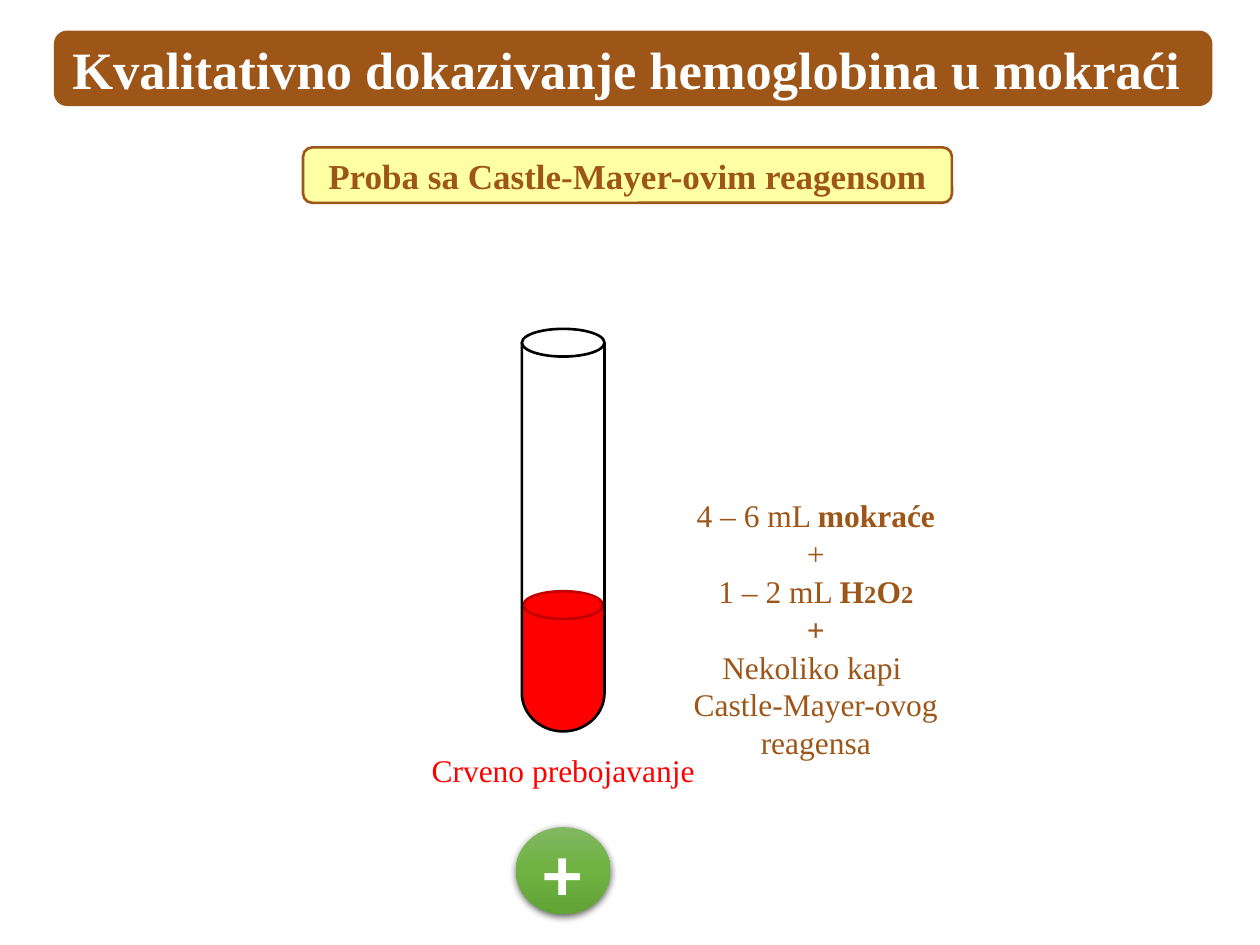
from copy import deepcopy
from math import cos, pi, sin

from lxml import etree
from pptx import Presentation
from pptx.dml.color import RGBColor
from pptx.enum.shapes import MSO_SHAPE
from pptx.enum.text import MSO_ANCHOR, PP_ALIGN
from pptx.util import Inches, Pt

ROUNDED, OVAL = MSO_SHAPE.ROUNDED_RECTANGLE, MSO_SHAPE.OVAL
MIDDLE, CENTER = MSO_ANCHOR.MIDDLE, PP_ALIGN.CENTER
SERIF = "Times New Roman"
BROWN, RED, BLACK, WHITE = "9D5618", "FF0000", "000000", "FFFFFF"
DRAWING = "http://schemas.openxmlformats.org/drawingml/2006/main"

deck = Presentation()
deck.slide_width, deck.slide_height = Inches(10), Inches(7.5)
page = deck.slides.add_slide(deck.slide_layouts[6])
CELL = deck.slide_width // 100  # grid of 100 columns and 75 rows


def color(value):
    return RGBColor.from_string(value)


def paint(shape, fill, line, width):
    """Set fill and outline, where None means neither is drawn."""
    shape.shadow.inherit = False
    if fill:
        shape.fill.solid()
        shape.fill.fore_color.rgb = color(fill)
    else:
        shape.fill.background()
    if line:
        shape.line.color.rgb = color(line)
        shape.line.width = Pt(width)
    else:
        shape.line.fill.background()


# Headings: column, row, columns, rows, fill, line width, text, size, text colour
headings = [
    (4.35, 2.5, 91.8, 5.85, BROWN, 1, "Kvalitativno dokazivanje hemoglobina u mokraći ", 30, WHITE),
    (24.05, 11.7, 51.5, 4.4, "FFFFA3", 1.5, "Proba sa Castle-Mayer-ovim reagensom", 20, BROWN),
]
for column, row, columns, rows, fill, width, text, size, ink in headings:
    heading = page.shapes.add_shape(
        ROUNDED, *(int(n * CELL) for n in (column, row, columns, rows)))
    paint(heading, fill, BROWN, width)
    heading.text_frame.word_wrap = True
    heading.text_frame.vertical_anchor = MIDDLE
    para = heading.text_frame.paragraphs[0]
    para.text, para.alignment = text, CENTER
    para.font.name, para.font.size, para.font.bold = SERIF, Pt(size), True
    para.font.color.rgb = color(ink)

# Test tube: the liquid and the glass share one rounded bottom.
# Outline points are whole EMU, because the builder rounds its coordinates.
tube_center, tube_radius = 44.7, 3.28
bottom_row, bottom_depth, rim_rows = 55, 3.05, 2.2
left_wall = int((tube_center - tube_radius) * CELL)
right_wall = int((tube_center + tube_radius) * CELL)
bottom = [(int((tube_center + tube_radius * cos(pi * step / 40)) * CELL),
           int((bottom_row + bottom_depth * sin(pi * step / 40)) * CELL))
          for step in range(41)]
parts = [  # top row, body fill, body line, rim fill, rim line, rim columns
    (48.02, RED, None, RED, "C00000", 6.3),
    (27.2, None, BLACK, WHITE, BLACK, 6.56),
]
for top, fill, line, rim_fill, rim_line, rim_columns in parts:
    top_edge = int(top * CELL)
    builder = page.shapes.build_freeform(left_wall, top_edge)
    builder.add_line_segments([(right_wall, top_edge)] + bottom, close=True)
    paint(builder.convert_to_shape(), fill, line, 1.5)
    rim = page.shapes.add_shape(
        OVAL, int((tube_center - rim_columns / 2) * CELL),
        int((top - rim_rows / 2) * CELL),
        int(rim_columns * CELL), int(rim_rows * CELL))
    paint(rim, rim_fill, rim_line, 1.5)

# Captions: each line is a list of (text, size, bold)
recipe = [
    [("4 – 6 mL ", 18, False), ("mokraće", 18, True)],
    [("+", 18, False)],
    [("1 – 2 mL ", 18, False), ("H", 18, True), ("2", 14, True),
     ("O", 18, True), ("2", 14, True)],
    [("+", 18, True)],
    [("Nekoliko kapi ", 18, False)],
    [("Castle-Mayer-ovog reagensa", 18, False)],
]
result = [[("Crveno prebojavanje", 18, False)]]
captions = [
    (49.8, 38.9, 29.9, 22.2, BROWN, recipe),
    (31.4, 59.1, 26.6, 4, RED, result),
]
for column, row, columns, rows, ink, lines in captions:
    box = page.shapes.add_textbox(
        *(int(n * CELL) for n in (column, row, columns, rows)))
    box.text_frame.word_wrap = True
    for index, spans in enumerate(lines):
        para = box.text_frame.add_paragraph() if index else box.text_frame.paragraphs[0]
        para.alignment = CENTER
        para.font.name = SERIF
        para.font.color.rgb = color(ink)
        for text, size, bold in spans:
            span = para.add_run()
            span.text = text
            span.font.size, span.font.bold = Pt(size), bold

# Positive result badge
badge = page.shapes.add_shape(
    OVAL, *(int(n * CELL) for n in (40.95, 65.65, 7.5, 6.9)))
paint(badge, None, None, 0)
badge.fill.gradient()
badge.fill.gradient_angle = 270
stop_list = badge.element.spPr.find(f".//{{{DRAWING}}}gsLst")
stop_list.insert(1, deepcopy(stop_list[0]))
for stop, (position, shade) in zip(
        badge.fill.gradient_stops, [(0, "81B861"), (0.5, "6FB242"), (1, "62A336")]):
    stop.position = position
    stop.color.rgb = color(shade)
effects = badge.element.spPr.find(f"{{{DRAWING}}}effectLst")
effects.append(etree.fromstring(
    f'<a:outerShdw xmlns:a="{DRAWING}" blurRad="57150" dist="19050" dir="5400000" '
    'algn="ctr" rotWithShape="0"><a:srgbClr val="000000"><a:alpha val="63000"/>'
    '</a:srgbClr></a:outerShdw>'))
badge.text_frame.vertical_anchor = MIDDLE
para = badge.text_frame.paragraphs[0]
para.text, para.alignment = "+", CENTER
para.font.name, para.font.size, para.font.bold = "Calibri", Pt(44), True
para.font.color.rgb = color(WHITE)

deck.save("out.pptx")
